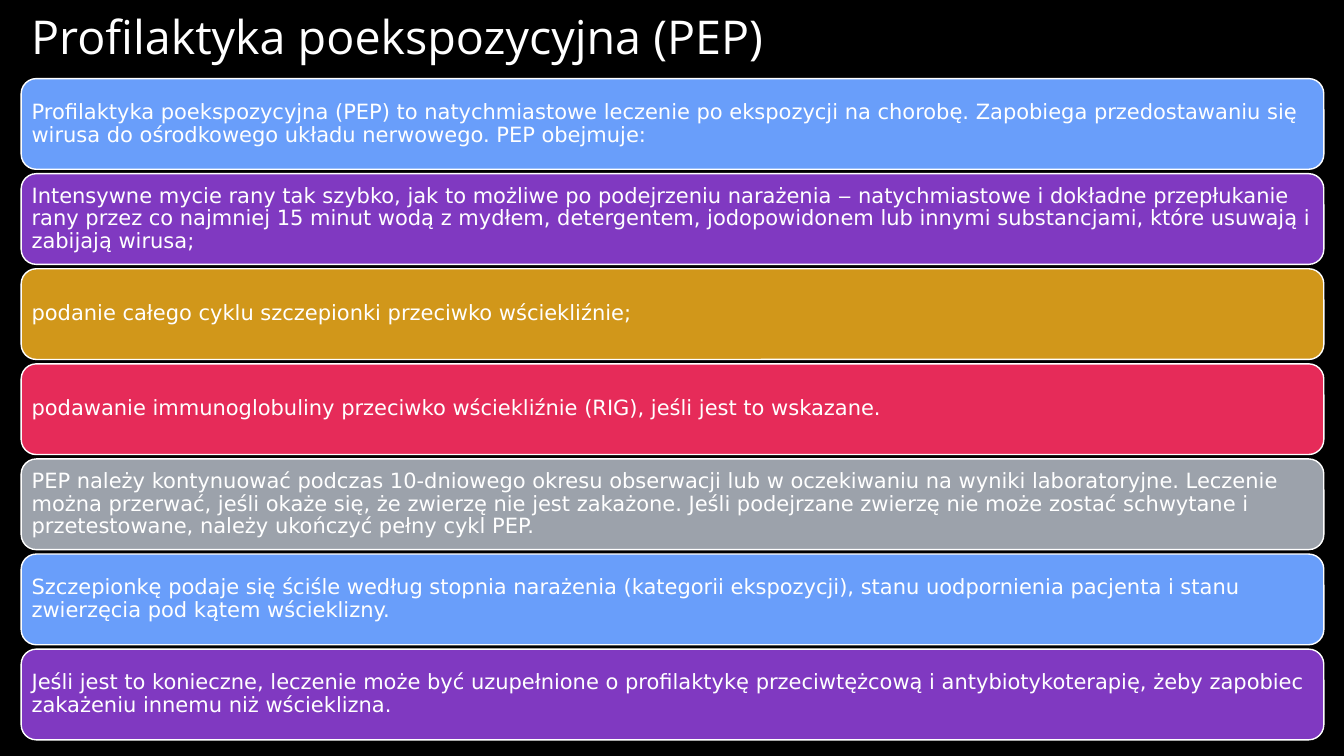
"""Builds the slide on post-exposure prophylaxis (PEP) against rabies."""
from dataclasses import dataclass

from pptx import Presentation
from pptx.dml.color import RGBColor
from pptx.enum.shapes import MSO_SHAPE as Shape
from pptx.enum.text import MSO_ANCHOR as Anchor, PP_ALIGN as Align
from pptx.slide import Slide
from pptx.text.text import TextFrame
from pptx.util import Inches, Pt

COLORS = {
    "black": "000000",
    "white": "FFFFFF",
    "blue": "699EFA",
    "purple": "8039C1",
    "gold": "D1971A",
    "red": "E62B59",
    "grey": "9CA2AB",
}
LEFT, BAR_WIDTH, BAR_HEIGHT = 0.21, 12.92, 0.9
FIRST_TOP, LAST_TOP = 0.78, 6.44
BAR_INSET = 0.06


@dataclass(frozen=True)
class Recommendation:
    """One coloured bar with its advice."""

    color: str
    text: str


RECOMMENDATIONS = [
    Recommendation(
        "blue",
        "Profilaktyka poekspozycyjna (PEP) to natychmiastowe leczenie po ekspozycji "
        "na chorobę. Zapobiega przedostawaniu się wirusa do ośrodkowego układu "
        "nerwowego. PEP obejmuje:",
    ),
    Recommendation(
        "purple",
        "Intensywne mycie rany tak szybko, jak to możliwe po podejrzeniu narażenia ‒ "
        "natychmiastowe i dokładne przepłukanie rany przez co najmniej 15 minut wodą "
        "z mydłem, detergentem, jodopowidonem lub innymi substancjami, które usuwają "
        "i zabijają wirusa;",
    ),
    Recommendation("gold", "podanie całego cyklu szczepionki przeciwko wściekliźnie;"),
    Recommendation(
        "red",
        "podawanie immunoglobuliny przeciwko wściekliźnie (RIG), jeśli jest to wskazane.",
    ),
    Recommendation(
        "grey",
        "PEP należy kontynuować podczas 10-dniowego okresu obserwacji lub "
        "w oczekiwaniu na wyniki laboratoryjne. Leczenie można przerwać, jeśli okaże "
        "się, że zwierzę nie jest zakażone. Jeśli podejrzane zwierzę nie może zostać "
        "schwytane i przetestowane, należy ukończyć pełny cykl PEP.",
    ),
    Recommendation(
        "blue",
        "Szczepionkę podaje się ściśle według stopnia narażenia (kategorii ekspozycji), "
        "stanu uodpornienia pacjenta i stanu zwierzęcia pod kątem wścieklizny.",
    ),
    Recommendation(
        "purple",
        "Jeśli jest to konieczne, leczenie może być uzupełnione o profilaktykę "
        "przeciwtężcową i antybiotykoterapię, żeby zapobiec zakażeniu innemu niż "
        "wścieklizna.",
    ),
]


def rgb(name: str) -> RGBColor:
    """Look up a named colour."""
    return RGBColor.from_string(COLORS[name])


def write(frame: TextFrame, text: str, font_name: str, size: float) -> None:
    """Fill a frame with one white, left-aligned paragraph."""
    frame.word_wrap = True
    frame.text = text
    paragraph = frame.paragraphs[0]
    paragraph.alignment = Align.LEFT
    paragraph.line_spacing = 0.9
    font = paragraph.runs[0].font
    font.name = font_name
    font.size = Pt(size)
    font.color.rgb = rgb("white")


def add_title(slide: Slide, text: str) -> None:
    """Place the heading above the bars."""
    heading = slide.shapes.add_textbox(
        Inches(LEFT), Inches(0.11), Inches(12.84), Inches(1.07)
    ).text_frame
    heading.vertical_anchor = Anchor.TOP
    heading.margin_top = Inches(0.03)
    write(heading, text, "Open Sans", 33.3)


def add_bar(slide: Slide, recommendation: Recommendation, top: float) -> None:
    """Draw one recommendation as a rounded bar."""
    bar = slide.shapes.add_shape(
        Shape.ROUNDED_RECTANGLE,
        Inches(LEFT), Inches(top), Inches(BAR_WIDTH), Inches(BAR_HEIGHT),
    )
    bar.shadow.inherit = False
    bar.fill.solid()
    bar.fill.fore_color.rgb = rgb(recommendation.color)
    bar.line.color.rgb = rgb("white")
    bar.line.width = Pt(1)
    advice = bar.text_frame
    advice.vertical_anchor = Anchor.MIDDLE
    advice.margin_left = advice.margin_right = Inches(BAR_INSET)
    advice.margin_top = advice.margin_bottom = Inches(BAR_INSET)
    write(advice, recommendation.text, "DejaVu Sans", 15)


def main() -> None:
    """Build and save the slide."""
    deck = Presentation()
    deck.slide_width, deck.slide_height = Inches(13.33), Inches(7.5)
    slide = deck.slides.add_slide(deck.slide_layouts[6])
    slide.background.fill.solid()
    slide.background.fill.fore_color.rgb = rgb("black")
    add_title(slide, "Profilaktyka poekspozycyjna (PEP)")
    pitch = (LAST_TOP - FIRST_TOP) / (len(RECOMMENDATIONS) - 1)
    for row, recommendation in enumerate(RECOMMENDATIONS):
        add_bar(slide, recommendation, FIRST_TOP + row * pitch)
    deck.save("out.pptx")


if __name__ == "__main__":
    main()
